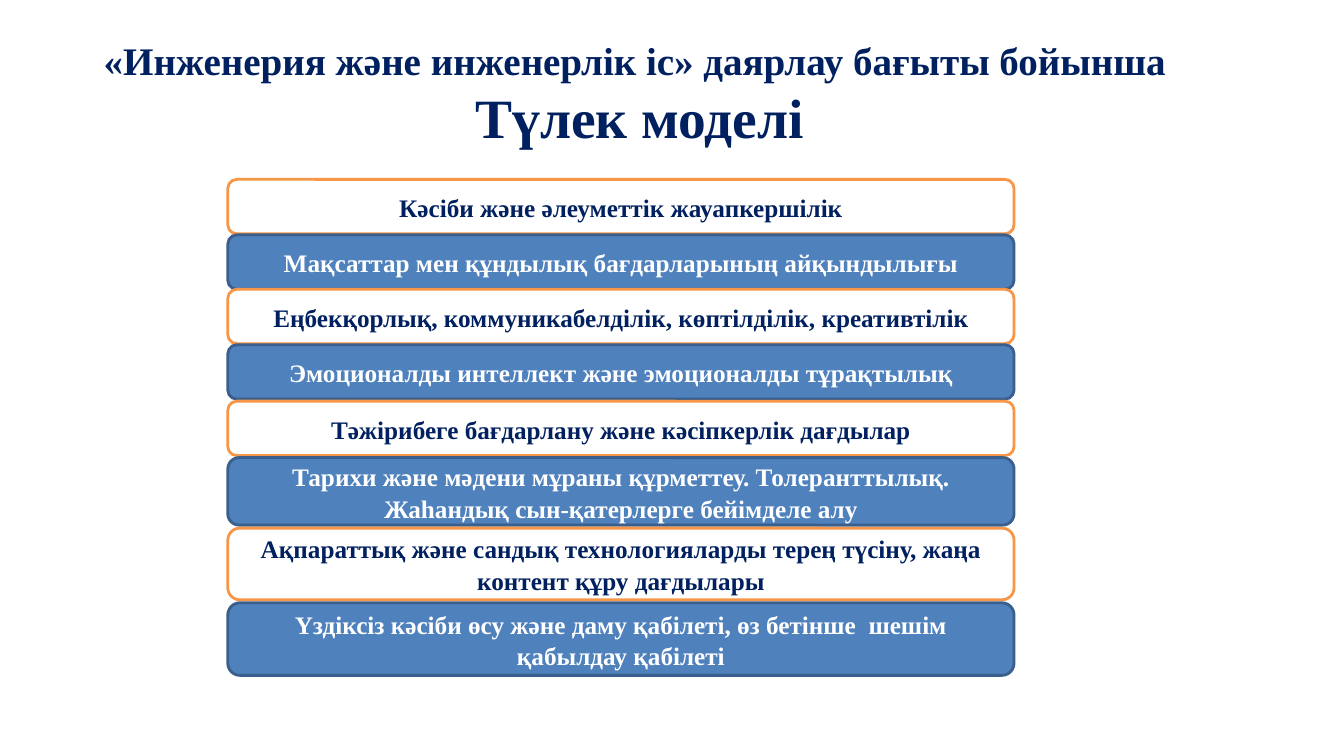
from copy import deepcopy

from pptx import Presentation
from pptx.dml.color import RGBColor
from pptx.enum.shapes import MSO_SHAPE
from pptx.enum.text import MSO_ANCHOR, MSO_AUTO_SIZE, PP_ALIGN
from pptx.util import Inches, Pt

COLOURS = {
    "navy": "002060",
    "white": "FFFFFF",
    "orange": "F79646",
    "blue": "4F81BD",
    "steel": "3A5F8C",
}
FONT = "Times New Roman"
BAR_LEFT, BAR_WIDTH = 16.95, 58.5
BAR_STYLES = [("white", "orange", "navy"), ("blue", "steel", "white")]
QUALITIES = [
    (23.73, 7.2, "Кәсіби және әлеуметтік жауапкершілік"),
    (31.07, 7.2, "Мақсаттар мен құндылық бағдарларының айқындылығы"),
    (38.27, 7.2, "Еңбекқорлық, коммуникабелділік, көптілділік, креативтілік"),
    (45.6, 7.2, "Эмоционалды интеллект және эмоционалды тұрақтылық"),
    (53.07, 7.2, "Тәжірибеге бағдарлану және кәсіпкерлік дағдылар"),
    (60.53, 8.93, "Тарихи және мәдени мұраны құрметтеу. Толеранттылық. Жаһандық сын-қатерлерге бейімделе алу"),
    (69.87, 9.47, "Ақпараттық және сандық технологияларды терең түсіну, жаңа контент құру дағдылары"),
    (79.73, 9.6, "Үздіксіз кәсіби өсу және даму қабілеті, өз бетінше  шешім қабылдау қабілеті"),
]


class GraduateSlide:
    """Draws the graduate model, with lengths in percent of the slide size."""

    def __init__(self, deck):
        self.deck = deck
        self.slide = deck.slides.add_slide(deck.slide_layouts[5])

    def box(self, left, top, width, height):
        across, down = self.deck.slide_width / 100, self.deck.slide_height / 100
        return [round(left * across), round(top * down), round(width * across), round(height * down)]

    def colour(self, name):
        return RGBColor.from_string(COLOURS[name])

    def add_words(self, paragraph, text, size, colour):
        paragraph.alignment = PP_ALIGN.CENTER
        run = paragraph.add_run()
        run.text = text
        run.font.name = FONT
        run.font.size = Pt(size)
        run.font.bold = True
        run.font.color.rgb = self.colour(colour)
        return run

    def title(self, box, field, heading):
        title = self.slide.shapes.title
        title.left, title.top, title.width, title.height = self.box(*box)
        frame = title.text_frame
        frame.word_wrap = True
        frame.auto_size = MSO_AUTO_SIZE.NONE
        frame.vertical_anchor = MSO_ANCHOR.MIDDLE
        paragraph = frame.paragraphs[0]
        field_run = self.add_words(paragraph, field, 27.9, "navy")
        paragraph.add_line_break()
        paragraph._p[-1].append(deepcopy(field_run._r.rPr))
        self.add_words(paragraph, heading, 39.6, "navy")

    def bar(self, box, text, fill, outline, ink):
        bar = self.slide.shapes.add_shape(MSO_SHAPE.ROUNDED_RECTANGLE, *self.box(*box))
        bar.shadow.inherit = False
        bar.fill.solid()
        bar.fill.fore_color.rgb = self.colour(fill)
        bar.line.color.rgb = self.colour(outline)
        bar.line.width = Pt(2)
        frame = bar.text_frame
        frame.word_wrap = True
        frame.vertical_anchor = MSO_ANCHOR.MIDDLE
        paragraph = frame.paragraphs[0]
        paragraph.line_spacing = 1.05
        self.add_words(paragraph, text, 18, ink)


def main():
    deck = Presentation()
    deck.slide_width, deck.slide_height = Inches(13.33), Inches(7.5)
    model = GraduateSlide(deck)
    model.title(
        (3.45, 4, 88.3, 16.67),
        "«Инженерия және инженерлік іс» даярлау бағыты бойынша ",
        "Түлек моделі",
    )
    for order, (top, height, quality) in enumerate(QUALITIES):
        style = BAR_STYLES[order % len(BAR_STYLES)]
        model.bar((BAR_LEFT, top, BAR_WIDTH, height), quality, *style)
    deck.save("out.pptx")


if __name__ == "__main__":
    main()
